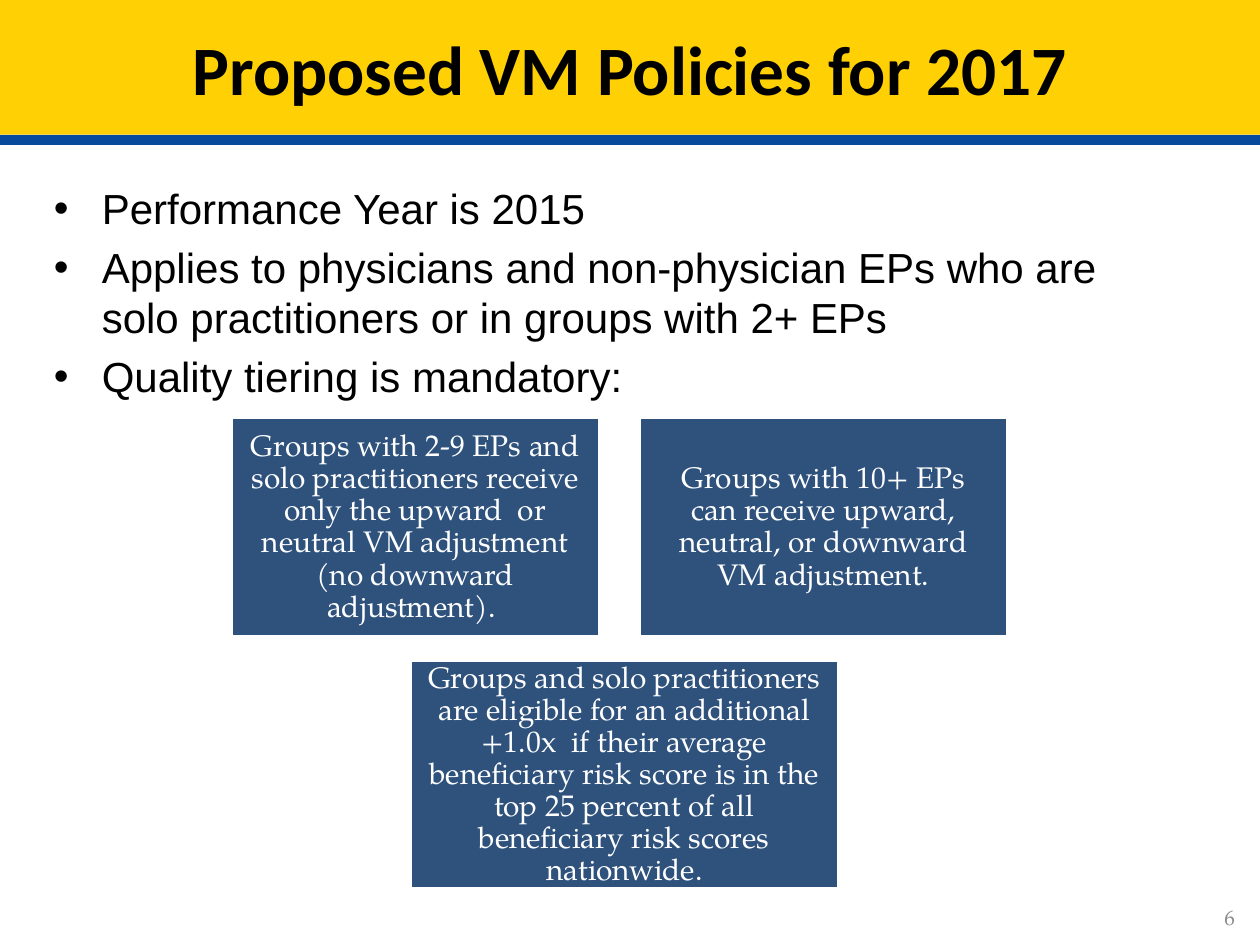
from lxml.etree import SubElement
from pptx import Presentation
from pptx.dml.color import RGBColor
from pptx.enum.shapes import MSO_SHAPE as Shape
from pptx.enum.text import MSO_ANCHOR as Anchor, PP_ALIGN as Align
from pptx.oxml.ns import qn
from pptx.util import Inches, Pt

SERIF = "TeX Gyre Pagella"
BULLETS = [
    "Performance Year is 2015",
    "Applies to physicians and non-physician EPs who are solo practitioners or in groups with 2+ EPs",
    "Quality tiering is mandatory:",
]
SMALL_GROUPS = ("Groups with 2-9 EPs and solo practitioners receive only the upward  or "
                "neutral VM adjustment (no downward adjustment). ")
LARGE_GROUPS = "Groups with 10+ EPs can receive upward, neutral, or downward VM adjustment."
RISK_BONUS = ("Groups and solo practitioners are eligible for an additional +1.0x  if their "
              "average beneficiary risk score is in the top 25 percent of all beneficiary "
              "risk scores nationwide.")


def color(value):
    return RGBColor.from_string(value)


def apply(target, values):
    for name, value in values.items():
        setattr(target, name, value)


def add_rect(page, box, fill, line=None):
    rect = page.shapes.add_shape(Shape.RECTANGLE, *map(Inches, box))
    rect.shadow.inherit = False
    rect.fill.solid()
    rect.fill.fore_color.rgb = color(fill)
    if line:
        rect.line.color.rgb = color(line)
        rect.line.width = Pt(3.78)
    else:
        rect.line.fill.background()
    return rect


def write(shape, lines, font, size, ink, align, anchor=Anchor.MIDDLE, bold=False,
          insets=(0.1, 0.05), **spacing):
    frame = shape.text_frame
    across, down = map(Inches, insets)
    apply(frame, {"word_wrap": True, "vertical_anchor": anchor,
                  "margin_left": across, "margin_right": across,
                  "margin_top": down, "margin_bottom": down})
    for index, line in enumerate(lines):
        para = frame.add_paragraph() if index else frame.paragraphs[0]
        apply(para, {"alignment": align, **spacing})
        span = para.add_run()
        span.text = line
        apply(span.font, {"name": font, "size": Pt(size), "bold": bold})
        span.font.color.rgb = color(ink)
    return frame.paragraphs


def add_header(page, box):
    left, top, width, height = box
    add_rect(page, (left, top + height, width, 0.08), "084A9C")
    band = add_rect(page, box, "FFD004")
    write(band, ["Proposed VM Policies for 2017"], "Calibri", 39.6, "000000",
          Align.CENTER, bold=True)


def add_bullets(page, box):
    body = page.shapes.add_textbox(*map(Inches, box))
    paras = write(body, BULLETS, "Arial", 24, "000000", Align.LEFT, Anchor.TOP,
                  space_before=Pt(4.8))
    for para in paras:
        props = para._p.get_or_add_pPr()
        props.set("marL", str(Inches(0.38)))
        props.set("indent", str(-Inches(0.38)))
        SubElement(props, qn("a:buFont")).set("typeface", "Arial")
        SubElement(props, qn("a:buChar")).set("char", "•")


def add_tile(page, box, text):
    tile = add_rect(page, box, "2F527D", "FFFFFF")
    write(tile, [text], SERIF, 17, "FFFFFF", Align.CENTER, insets=(0.15, 0.07),
          line_spacing=0.9)


def add_tiles(page, box):
    left, top, width, height = box
    tile_width, tile_height = 2.95, 1.77
    add_tile(page, (left, top, tile_width, tile_height), SMALL_GROUPS)
    add_tile(page, (left + width - tile_width, top, tile_width, tile_height), LARGE_GROUPS)
    wide, tall = 3.43, 1.84
    add_tile(page, (left + 1.42, top + height - tall, wide, tall), RISK_BONUS)


def add_page_number(page, box):
    number = page.shapes.add_textbox(*map(Inches, box))
    write(number, ["6"], SERIF, 12, "8C8C8C", Align.RIGHT)


def main():
    deck = Presentation()
    apply(deck, {"slide_width": Inches(10), "slide_height": Inches(7.5)})
    page = deck.slides.add_slide(deck.slide_layouts[6])
    add_header(page, (0, 0, 10, 1.07))
    add_bullets(page, (0.33, 1.4, 9, 1.8))
    add_tiles(page, (1.82, 3.3, 6.19, 3.77))
    add_page_number(page, (7.57, 7.08, 2.33, 0.4))
    deck.save("out.pptx")


if __name__ == "__main__":
    main()
